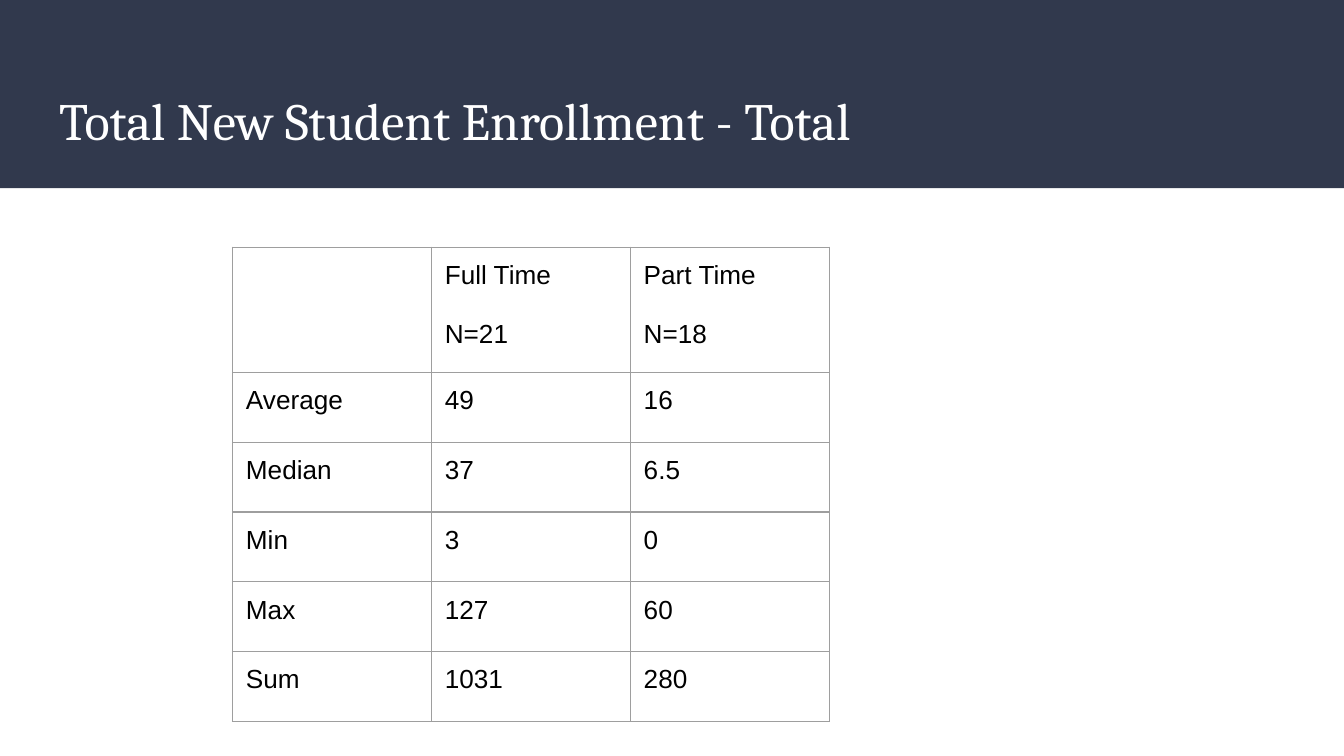
from lxml import etree
from pptx import Presentation
from pptx import util as u
from pptx.dml.color import RGBColor
from pptx.enum import shapes, text
from pptx.oxml import ns

TITLE = "Total New Student Enrollment - Total"
ROWS = [
    ("", "Full Time\nN=21", "Part Time\nN=18"),
    ("Average", "49", "16"),
    ("Median", "37", "6.5"),
    ("Min", "3", "0"),
    ("Max", "127", "60"),
    ("Sum", "1031", "280"),
]
THEME = {
    "band": RGBColor.from_string("31394D"),
    "rule": "9E9E9E",
    "width": u.Pt(0.75),
    "gap": u.Pt(16),
    "title": {"name": "Cambria", "size": u.Pt(28), "color": "FFFFFF"},
    "body": {"name": "Arial", "size": u.Pt(14), "color": "000000"},
}
WIDE = u.Inches(10)
HIGH = WIDE * 9 // 16
LEFT, TOP, COL, HEAD, ROW = 1.73, 1.84, 1.48, 0.93, 0.52
PAD = u.Inches(0.1)


def assign(obj, vals):
    for key, val in vals.items():
        setattr(obj, key, val)


def style(par, font):
    par.alignment = text.PP_ALIGN.LEFT
    for run in par.runs:
        assign(run.font, {"name": font["name"], "size": font["size"]})
        run.font.color.rgb = RGBColor.from_string(font["color"])


def pad(obj):
    assign(obj, {f"margin_{side}": PAD for side in ("left", "right", "top", "bottom")})


def border(cell):
    props = cell._tc.get_or_add_tcPr()
    for spot, side in enumerate(("lnL", "lnR", "lnT", "lnB")):
        line = etree.Element(ns.qn(f"a:{side}"), w=str(int(THEME["width"])))
        fill = etree.SubElement(line, ns.qn("a:solidFill"))
        etree.SubElement(fill, ns.qn("a:srgbClr"), val=THEME["rule"])
        props.insert(spot, line)


def add_band(slide):
    band = slide.shapes.add_shape(
        shapes.MSO_SHAPE.RECTANGLE, 0, 0, WIDE, u.Inches(1.4))
    band.shadow.inherit = False
    band.fill.solid()
    band.fill.fore_color.rgb = THEME["band"]
    band.line.fill.background()
    slide.shapes._spTree.insert(2, band._element)


def add_title(slide):
    title = slide.shapes.title
    assign(title, {"left": u.Inches(0.34), "top": u.Inches(0.55),
                   "width": u.Inches(9.32), "height": u.Inches(0.68)})
    frame = title.text_frame
    frame.text = TITLE
    pad(frame)
    assign(frame, {"word_wrap": True, "auto_size": text.MSO_AUTO_SIZE.NONE,
                   "vertical_anchor": text.MSO_ANCHOR.MIDDLE})
    style(frame.paragraphs[0], THEME["title"])


def add_grid(slide):
    cols = len(ROWS[0])
    highs = [HEAD] + [ROW] * (len(ROWS) - 1)
    grid = slide.shapes.add_table(
        len(ROWS), cols, u.Inches(LEFT), u.Inches(TOP),
        u.Inches(COL * cols), u.Inches(sum(highs))).table
    assign(grid, {"first_row": False, "horz_banding": False})
    for col in grid.columns:
        col.width = u.Inches(COL)
    for row, high, words in zip(grid.rows, highs, ROWS):
        row.height = u.Inches(high)
        for cell, word in zip(row.cells, words):
            cell.text = word
            cell.fill.background()
            cell.vertical_anchor = text.MSO_ANCHOR.TOP
            pad(cell)
            border(cell)
            for num, par in enumerate(cell.text_frame.paragraphs):
                style(par, THEME["body"])
                if num:
                    par.space_before = THEME["gap"]


def main():
    deck = Presentation()
    assign(deck, {"slide_width": WIDE, "slide_height": HIGH})
    slide = deck.slides.add_slide(deck.slide_layouts.get_by_name("Title Only"))
    add_band(slide)
    add_title(slide)
    add_grid(slide)
    deck.save("out.pptx")


if __name__ == "__main__":
    main()
